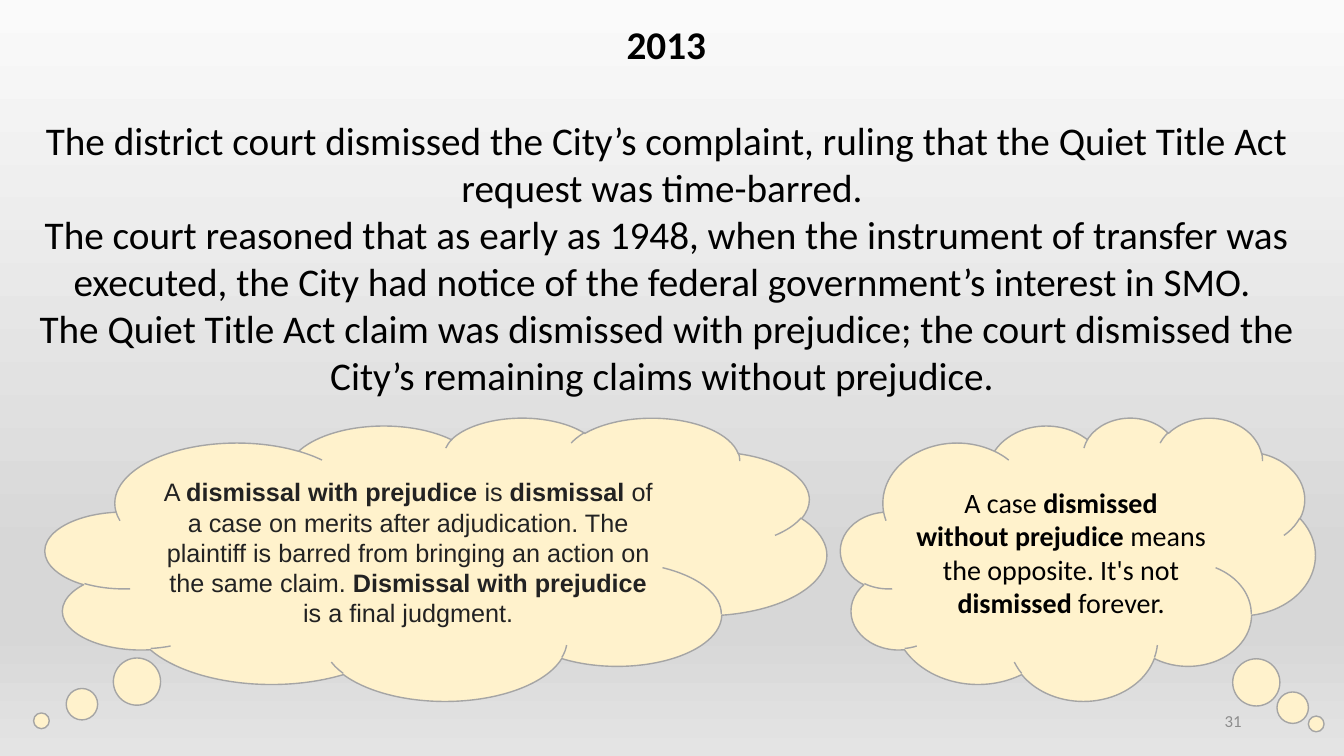
from lxml.etree import SubElement
from pptx import Presentation
from pptx.dml.color import RGBColor
from pptx.enum.shapes import MSO_SHAPE as SHAPE
from pptx.enum.text import MSO_ANCHOR as ANCHOR, MSO_AUTO_SIZE as AUTO, PP_ALIGN as ALIGN
from pptx.oxml.ns import qn
from pptx.util import Pt

# Content
TITLE = "2013"
RULING = [
    "The district court dismissed the City’s complaint, ruling that the Quiet Title Act request was time-barred. ",
    "The court reasoned that as early as 1948, when the instrument of transfer was executed, "
    "the City had notice of the federal government’s interest in SMO. ",
    "The Quiet Title Act claim was dismissed with prejudice; "
    "the court dismissed the City’s remaining claims without prejudice. ",
]
PAGE = "31"
# Every second piece of a callout's text is bold
CALLOUTS = [
    dict(left=32.4, width=558, tail=(-0.505, 0.572), font="Arial", size=18, color="ink",
         pieces=["A ", "dismissal with prejudice", " is ", "dismissal",
                 " of a case on merits after adjudication. The plaintiff is barred "
                 "from bringing an action on the same claim. ",
                 "Dismissal with prejudice", " is a final judgment."]),
    dict(left=600.5, width=339, tail=(0.502, 0.583), font="Calibri", size=20, color="black",
         pieces=["A case ", "dismissed without prejudice",
                 " means the opposite. It's not ", "dismissed", " forever."]),
]
COLORS = dict(black="000000", ink="222222", page="8C8C8C", cloud="FFF2CC", outline="A5A5A5")
BACKGROUND = [(0, "FAFAFA"), (74, "D7D7D7"), (83, "D7D7D7"), (100, "E4E4E4")]

# Layout
TEXT_WIDTH = 952
TITLE_TOP, LINE = 10.8, 34.2
BODY_TOP = TITLE_TOP + 2 * LINE
CLOUD_TOP, CLOUD_HEIGHT = 298, 202.3


def rgb(name):
    return RGBColor.from_string(COLORS[name])


def style(font, name, size, color, bold=False):
    font.name, font.size, font.bold = name, Pt(size), bold
    font.color.rgb = rgb(color)


def fill_placeholder(sp, top, height, lines, bold):
    sp.left, sp.top, sp.width, sp.height = Pt(0), Pt(top), Pt(TEXT_WIDTH), Pt(height)
    tf = sp.text_frame
    tf.text = "\n".join(lines)
    tf.auto_size, tf.vertical_anchor = AUTO.NONE, ANCHOR.TOP
    for p in tf.paragraphs:
        pPr = p._p.get_or_add_pPr()
        pPr.set("marL", "0")
        pPr.set("indent", "0")
        SubElement(pPr, qn("a:buNone"))
        p.alignment, p.line_spacing, p.space_before = ALIGN.CENTER, 1.0, Pt(0)
        for r in p.runs:
            style(r.font, "Calibri", 28, "black", bold)


prs = Presentation()
prs.slide_width, prs.slide_height = Pt(960), Pt(540)
s = prs.slides.add_slide(prs.slide_layouts[1])

# Background gradient, top to bottom
fill = s.background.fill
fill.gradient()
fill.gradient_angle = 270
stops = s.element.find(".//" + qn("a:gsLst"))
for stop in list(stops):
    stops.remove(stop)
for percent, color in BACKGROUND:
    stop = SubElement(stops, qn("a:gs"), pos=str(percent * 1000))
    SubElement(stop, qn("a:srgbClr"), val=color)

# Slide number
sp = s.shapes.add_textbox(Pt(678), Pt(500.4), Pt(216), Pt(28.8))
tf = sp.text_frame
tf.text, tf.word_wrap, tf.vertical_anchor = PAGE, True, ANCHOR.MIDDLE
p = tf.paragraphs[0]
p.alignment = ALIGN.RIGHT
style(p.runs[0].font, "Calibri", 12, "page")

# Title and ruling
fill_placeholder(s.shapes.title, TITLE_TOP, LINE + 7.2, [TITLE], True)
fill_placeholder(s.placeholders[1], BODY_TOP, 6 * LINE + 7.2, RULING, False)

# Cloud callouts
for c in CALLOUTS:
    sp = s.shapes.add_shape(SHAPE.CLOUD_CALLOUT, Pt(c["left"]), Pt(CLOUD_TOP),
                            Pt(c["width"]), Pt(CLOUD_HEIGHT))
    sp.adjustments[0], sp.adjustments[1] = c["tail"]
    sp.shadow.inherit = False
    sp.fill.solid()
    sp.fill.fore_color.rgb = rgb("cloud")
    sp.line.color.rgb, sp.line.width = rgb("outline"), Pt(1)
    tf = sp.text_frame
    tf.word_wrap, tf.vertical_anchor = True, ANCHOR.MIDDLE
    p = tf.paragraphs[0]
    p.alignment = ALIGN.CENTER
    for i, piece in enumerate(c["pieces"]):
        r = p.add_run()
        r.text = piece
        style(r.font, c["font"], c["size"], c["color"], i % 2 == 1)

prs.save("out.pptx")
